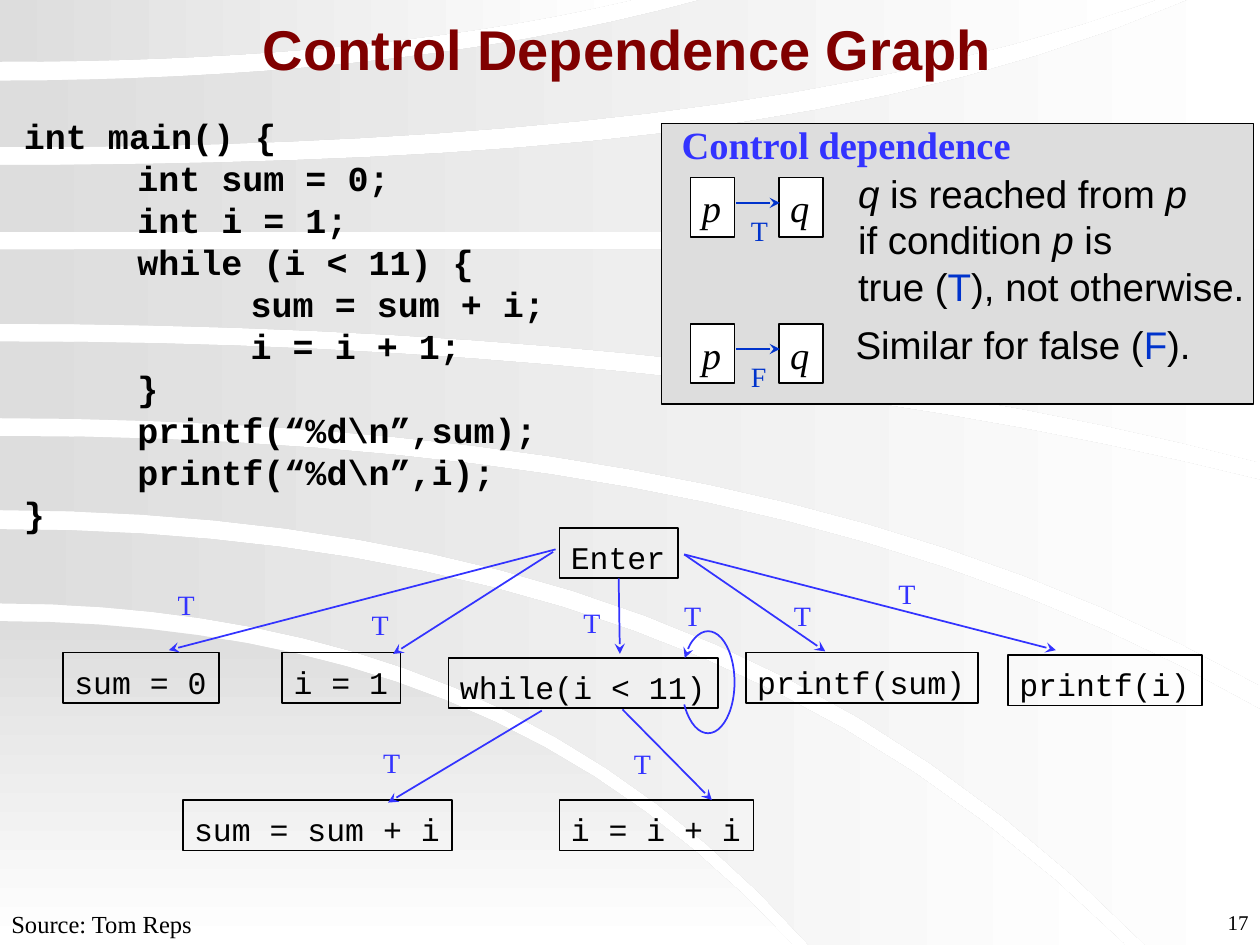
from pptx import Presentation
from pptx.dml.color import RGBColor
from pptx.enum.shapes import MSO_CONNECTOR as Conn, MSO_SHAPE as Kind
from pptx.enum.text import MSO_ANCHOR as Anchor, PP_ALIGN as Align
from pptx.oxml.ns import qn
from pptx.util import Inches, Pt
from lxml.etree import SubElement as Sub

BLACK, WHITE, GREY = "000000", "FFFFFF", "DDDDDD"
RED, BLUE, NAVY = "800000", "3333FF", "0033CC"
SANS, MONO, SERIF = "Arial", "Courier New", "Times New Roman"
WIDE, TALL = 10, 7.5
STEPS = 16

BANDS = [
    ((4.93, 3.28, 5.46, 6.29, TALL), [(0, TALL)], None),
    ((4.2, 4.72, 4.9, 8.93, TALL), [], (4.79, 3.42, 5.38, 6.42, TALL)),
    ((3.46, 5.7, 4.01, WIDE, 5.63), [(WIDE, TALL)], (4.05, 5.21, 4.92, 9.09, TALL)),
    ((2.71, 5.23, 2.98, WIDE, 3.81), [], (3.32, 5.6, 3.84, WIDE, 5.44)),
    (None, [(0, 1.98), (WIDE, 1.98)], (2.57, 5.52, 2.86, WIDE, 3.67)),
    ((1.31, 6.44, 0.88, 9.43, 0), [(WIDE, 0), (WIDE, 1.84), (0, 1.84)], None),
    ((0.64, 3.08, 0.47, 5.56, 0), [], (1.17, 5.45, 0.86, 9.17, 0)),
    (None, [(0, 0)], (0.49, 2.89, 0.35, 5.01, 0)),
]
CODE = ["int main() {", "\tint sum = 0;", "\tint i = 1;", "\twhile (i < 11) {",
        "\t\tsum = sum + i;", "\t\ti = i + 1;", "\t}", "\tprintf(“%d\\n”,sum);",
        "\tprintf(“%d\\n”,i);", "}"]
RULE = [[("q", "i"), " is reached from ", ("p", "i")],
        ["if condition ", ("p", "i"), " is"],
        ["true (", ("T", "c"), "), not otherwise."]]
SAME = [["Similar for false (", ("F", "c"), ")."]]
NODES = [("Enter", 4.44, 4.19), ("sum = 0", 0.5, 5.18), ("i = 1", 2.24, 5.18),
         ("while(i < 11)", 3.56, 5.22), ("printf(sum)", 5.92, 5.18),
         ("printf(i)", 8, 5.2), ("sum = sum + i", 1.45, 6.35), ("i = i + i", 4.44, 6.35)]
EDGES = [(4.3, 5.64, 3.08, 6.37), (4.41, 4.36, 1.34, 5.16), (4.39, 4.38, 3.12, 5.19),
         (5.43, 4.4, 6.55, 5.17), (5.43, 4.4, 8.38, 5.16), (4.94, 5.63, 5.65, 6.35)]
MARKS = [(2.95, 5.87), (4.94, 5.88), (1.32, 4.62), (2.86, 4.78), (6.21, 4.71),
         (7.04, 4.53), (5.34, 4.71), (4.54, 4.76)]
PAIRS = [("T", 1.41), ("F", 2.57)]

deck = Presentation()
deck.slide_width, deck.slide_height = Inches(WIDE), Inches(TALL)
shapes = deck.slides.add_slide(deck.slide_layouts[6]).shapes


def tint(hexa):
    return RGBColor.from_string(hexa)


def curve(edge):
    if not edge:
        return []
    base, midx, midy, endx, endy = edge
    near, far = (midy - base) / midx ** 2, (endy - base) / endx ** 2
    bend = (far - near) / (endx ** 2 - midx ** 2)
    slope = near - bend * midx ** 2
    xs = [endx * n / STEPS for n in range(STEPS + 1)]
    return [(x, base + slope * x ** 2 + bend * x ** 4) for x in xs]


def write(shape, paras, size, font, color=BLACK, bold=False, slant=False,
          align=Align.LEFT, pad=0.05):
    frame = shape.text_frame
    frame.word_wrap = False
    frame.vertical_anchor = Anchor.BOTTOM
    frame.margin_left = frame.margin_right = Inches(0.09)
    frame.margin_top = frame.margin_bottom = Inches(pad)
    for n, parts in enumerate(paras):
        para = frame.add_paragraph() if n else frame.paragraphs[0]
        para.alignment = align
        if len(paras) > 1:
            para.line_spacing = Pt(size * 1.2)
        for part in [parts] if isinstance(parts, str) else parts:
            text, flag = (part, "") if isinstance(part, str) else part
            run = para.add_run()
            run.text = text
            run.font.size, run.font.name = Pt(size), font
            run.font.bold, run.font.italic = bold, slant or flag == "i"
            run.font.color.rgb = tint(NAVY if flag == "c" else color)
    return shape


def label(box, paras, *args, **opts):
    return write(shapes.add_textbox(*map(Inches, box)), paras, *args, **opts)


def rect(box, fill=None):
    shape = shapes.add_shape(Kind.RECTANGLE, *map(Inches, box))
    shape.shadow.inherit = False
    if fill:
        shape.fill.solid()
        shape.fill.fore_color.rgb = tint(fill)
    else:
        shape.fill.background()
    shape.line.color.rgb, shape.line.width = tint(BLACK), Pt(1)
    return shape


def stroke(shape, color, end):
    shape.line.color.rgb, shape.line.width = tint(color), Pt(1)
    Sub(shape.line._get_or_add_ln(), qn("a:" + end), type="stealth")


def arrow(ends, color):
    line = shapes.add_connector(Conn.STRAIGHT, *map(Inches, ends))
    stroke(line, color, "tailEnd")
    Sub(line._element.spPr, qn("a:effectLst"))
    return line


for n, (upper, corners, lower) in enumerate(BANDS):
    band = curve(upper) + corners + curve(lower)[::-1]
    spots = [(Inches(x), Inches(y)) for x, y in band]
    pen = shapes.build_freeform(*spots[0], scale=1.0)
    pen.add_line_segments(spots[1:])
    wave = pen.convert_to_shape()
    wave.shadow.inherit = False
    wave.line.fill.background()
    wave.fill.gradient()
    wave.fill.gradient_angle = 0 if n else 270
    for stop, hexa in zip(wave.fill.gradient_stops, (GREY, WHITE)):
        stop.color.rgb = tint(hexa)

label((0.73, 0, 8.5, 0.7), ["Control Dependence Graph"], 32, SANS, RED, True,
      align=Align.CENTER)

rect((5.25, 0.98, 4.7, 2.23), GREY)
label((5.32, 0.92, 2.8, 0.46), ["Control dependence"], 22, SERIF, BLUE, True)
label((6.72, 1.3, 3.3, 1.2), RULE, 22, SANS)
label((6.7, 2.5, 2.87, 0.46), SAME, 22, SANS)
for mark, top in PAIRS:
    for name, left in (("p", 5.48), ("q", 6.18)):
        write(rect((left, top, 0.35, 0.47), WHITE), [name], 22, SERIF, slant=True)
    arrow((5.84, top + 0.2, 6.19, top + 0.2), NAVY)
    label((5.87, top + 0.24, 0.32, 0.36), [mark], 16, SERIF, NAVY)

boxes = {}
for name, left, top in NODES:
    box = rect((left, top, 0.19 + 0.15 * len(name), 0.4))
    boxes[name] = write(box, [name], 18, MONO, pad=0.02)
for ends in EDGES:
    arrow(ends, BLUE)
arrow((4.91, 4.59, 4.92, 5.19), BLUE).begin_connect(boxes["Enter"], 2)
for spot in MARKS:
    label((*spot, 0.32, 0.36), ["T"], 16, SERIF, BLUE)

loop = shapes.add_shape(Kind.ARC, *map(Inches, (5.41, 5.01, 0.42, 0.81)))
loop.shadow.inherit = False
loop.fill.background()
for n, angle in enumerate((226, 137)):
    loop.adjustments[n] = angle * 0.6
stroke(loop, BLUE, "headEnd")

code = label((0.1, 0.83, 4.73, 3.46), CODE, 20, MONO, bold=True)
for para in code.text_frame.paragraphs:
    tabs = Sub(para._p.get_or_add_pPr(), qn("a:tabLst"))
    for n in (1, 2):
        Sub(tabs, qn("a:tab"), pos=str(Inches(0.9 * n)), algn="l")

label((0, 7.16, 1.65, 0.34), ["Source: Tom Reps"], 14, SERIF)
label((7.92, 7.17, 2.08, 0.3), ["17"], 12, SERIF, align=Align.RIGHT)

deck.save("out.pptx")
